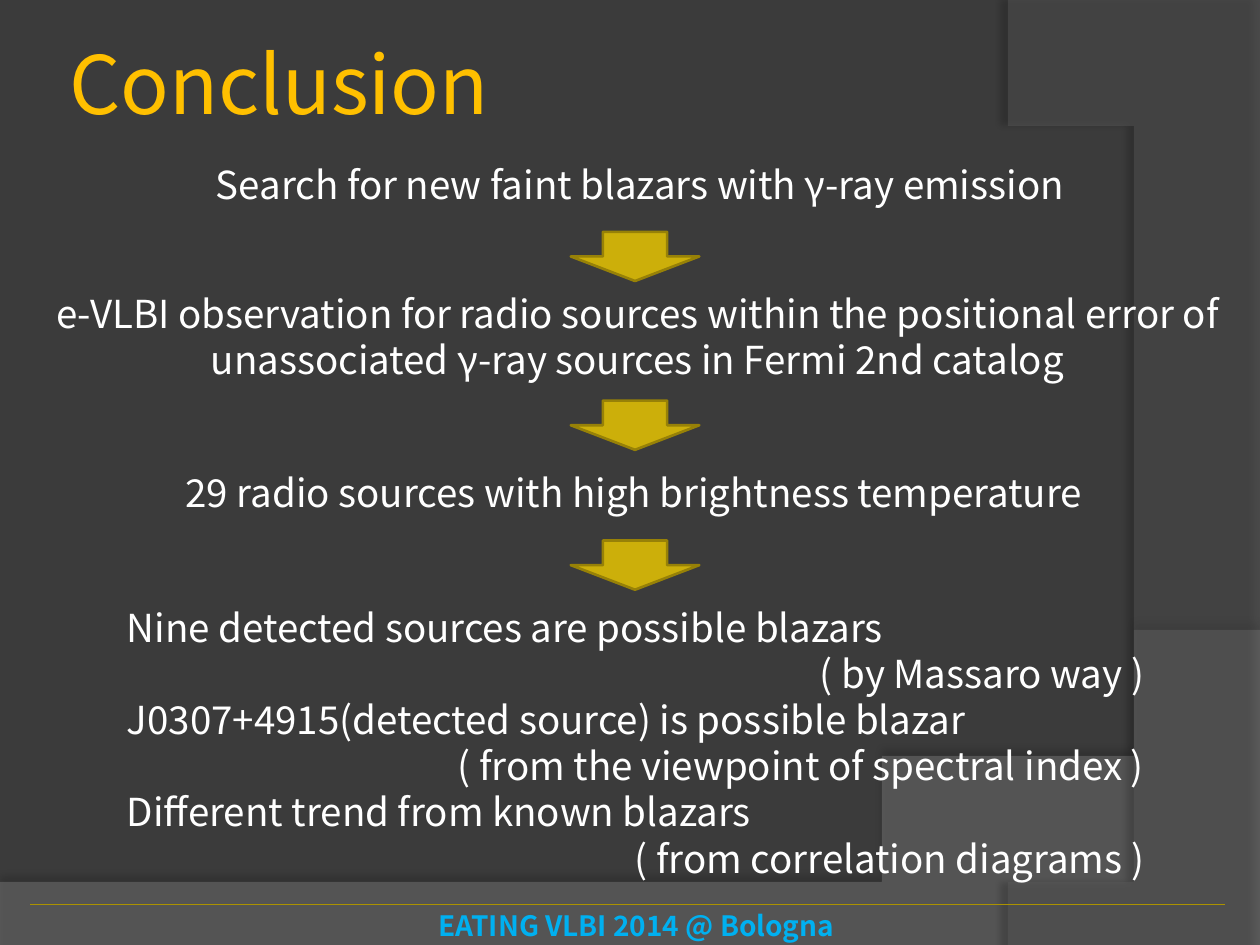
import pptx
import pptx.dml.color
import pptx.enum.shapes
import pptx.enum.text
import pptx.oxml
import pptx.oxml.ns
import pptx.util
from pptx.util import Inches

theme = {
    "font": "Noto Sans CJK JP", "back": "3B3B3B", "title": "FFC000",
    "body": "FFFFFF", "foot": "00B0F0", "edge": "002060",
    "arrow": "CCAF0A", "rim": "978107", "rule": "AB9200",
    "title_size": 46, "body_size": 22, "foot_size": 16,
}
rgb = pptx.dml.color.RGBColor.from_string
Align = pptx.enum.text.PP_ALIGN
Anchor = pptx.enum.text.MSO_ANCHOR
NS = pptx.oxml.ns.nsdecls("a")


def style(para, size, color, bold=False, edge=False):
    """Format the runs of a paragraph, with a thin outline if edge is set."""
    for run in para.runs:
        font = run.font
        font.name = theme["font"]
        font.size = pptx.util.Pt(size)
        font.bold = bold
        font.color.rgb = rgb(color)
        if edge:
            font._element.insert(0, pptx.oxml.parse_xml(
                f'<a:ln {NS} w="9525"><a:solidFill><a:srgbClr val="{theme["edge"]}"/>'
                '</a:solidFill></a:ln>'))


def curve(a, b, c, d, steps=40):
    """Points along a cubic Bezier, after its start."""
    spots = []
    for i in range(1, steps + 1):
        t = i / steps
        u = 1 - t
        spots.append(tuple(
            u**3 * p + 3 * u * u * t * q + 3 * u * t * t * r + t**3 * s
            for p, q, r, s in zip(a, b, c, d)))
    return spots


deck = pptx.Presentation()
deck.slide_width, deck.slide_height = Inches(10), Inches(7.5)
slide = deck.slides.add_slide(deck.slide_layouts[5])
shapes = slide.shapes
slide.background.fill.solid()
slide.background.fill.fore_color.rgb = rgb(theme["back"])

# Background waves: outline, colour, opacity, shadow opacity, distance, angle
low = [(0, 7.05), (0, 7.51), (10, 7.51), (10, 5.2)]
low += curve((10, 5.2), (5.59, 7.29), (3.91, 7.19), (0, 7.05))
side = [(10, 0.02), (10, 7.5), (8.21, 7.5)]
side += curve((8.21, 7.5), (9.35, 6.19), (10.18, 3), (8, 0))
waves = [(low, "7F7F7F", 45, 35, 3.5, 270), (side, "5E5E5E", 40, 45, 4, 180)]
for spots, color, alpha, dark, gap, angle in waves:
    pen = shapes.build_freeform(*spots[0], scale=Inches(1))
    pen.add_line_segments(spots[1:], close=True)
    wave = pen.convert_to_shape()
    wave.fill.solid()
    wave.fill.fore_color.rgb = rgb(color)
    wave.line.fill.background()
    wave.shadow.inherit = False
    props = wave.element.spPr
    tint = props.find(".//" + pptx.oxml.ns.qn("a:srgbClr"))
    tint.append(pptx.oxml.parse_xml(f'<a:alpha {NS} val="{alpha * 1000}"/>'))
    props.find(pptx.oxml.ns.qn("a:effectLst")).append(pptx.oxml.parse_xml(
        f'<a:outerShdw {NS} blurRad="{pptx.util.Pt(4)}" dist="{pptx.util.Pt(gap)}" '
        f'dir="{angle * 60000}" algn="ctr" rotWithShape="0"><a:srgbClr val="000000">'
        f'<a:alpha val="{dark * 1000}"/></a:srgbClr></a:outerShdw>'))

title = shapes.title
shapes.element.append(title.element)  # in front of the waves
title.left, title.top = Inches(0.5), Inches(0.03)
title.width, title.height = Inches(8.17), Inches(1.25)
frame = title.text_frame
frame.text = "Conclusion"
frame.vertical_anchor = Anchor.MIDDLE
frame.margin_left = frame.margin_right = Inches(0.05)
frame.paragraphs[0].alignment = Align.LEFT
style(frame.paragraphs[0], theme["title_size"], theme["title"], edge=True)

# Body steps: place, anchor, lines with their alignment
steps = [
    ((0.91, 1.23, 8.27, 0.47), Anchor.TOP,
     [(" Search for new faint blazars with γ-ray emission", Align.CENTER)]),
    ((0.87, 3.67, 8.39, 0.47), Anchor.MIDDLE,
     [("29 radio sources with high brightness temperature ", Align.CENTER)]),
    ((0.16, 2.25, 9.8, 0.84), Anchor.TOP,
     [("e-VLBI observation for radio sources within the positional error of "
       "unassociated γ-ray sources in Fermi 2nd catalog", Align.CENTER)]),
    ((0.91, 4.73, 8.27, 2.32), Anchor.MIDDLE,
     [("Nine detected sources are possible blazars", Align.LEFT),
      ("( by Massaro way )", Align.RIGHT),
      ("J0307+4915(detected source) is possible blazar", Align.LEFT),
      ("( from the viewpoint of spectral index )", Align.RIGHT),
      ("Different trend from known blazars", Align.LEFT),
      ("( from correlation diagrams )", Align.RIGHT)]),
]
for place, anchor, lines in steps:
    frame = shapes.add_textbox(*map(Inches, place)).text_frame
    frame.word_wrap = True
    frame.vertical_anchor = anchor
    frame.text = "\n".join(line for line, align in lines)
    for para, (line, align) in zip(frame.paragraphs, lines):
        para.alignment = align
        style(para, theme["body_size"], theme["body"])

for top in (1.84, 3.18, 4.29):
    arrow = shapes.add_shape(
        pptx.enum.shapes.MSO_SHAPE.DOWN_ARROW,
        Inches(4.53), Inches(top), Inches(1.02), Inches(0.39))
    arrow.shadow.inherit = False
    arrow.fill.solid()
    arrow.fill.fore_color.rgb = rgb(theme["arrow"])
    arrow.line.color.rgb = rgb(theme["rim"])
    arrow.line.width = pptx.util.Pt(1.5)

frame = shapes.add_textbox(
    Inches(3.03), Inches(7.16), Inches(4.09), Inches(0.37)).text_frame
frame.word_wrap = True
frame.text = "EATING VLBI 2014 @ Bologna "
frame.paragraphs[0].alignment = Align.CENTER
style(frame.paragraphs[0], theme["foot_size"], theme["foot"], bold=True, edge=True)

rule = shapes.add_connector(
    pptx.enum.shapes.MSO_CONNECTOR.STRAIGHT,
    Inches(0.24), Inches(7.18), Inches(9.72), Inches(7.18))
rule.line.color.rgb = rgb(theme["rule"])
rule.line.width = pptx.util.Pt(0.75)
rule.element.spPr.append(pptx.oxml.parse_xml(f"<a:effectLst {NS}/>"))

deck.save("out.pptx")
